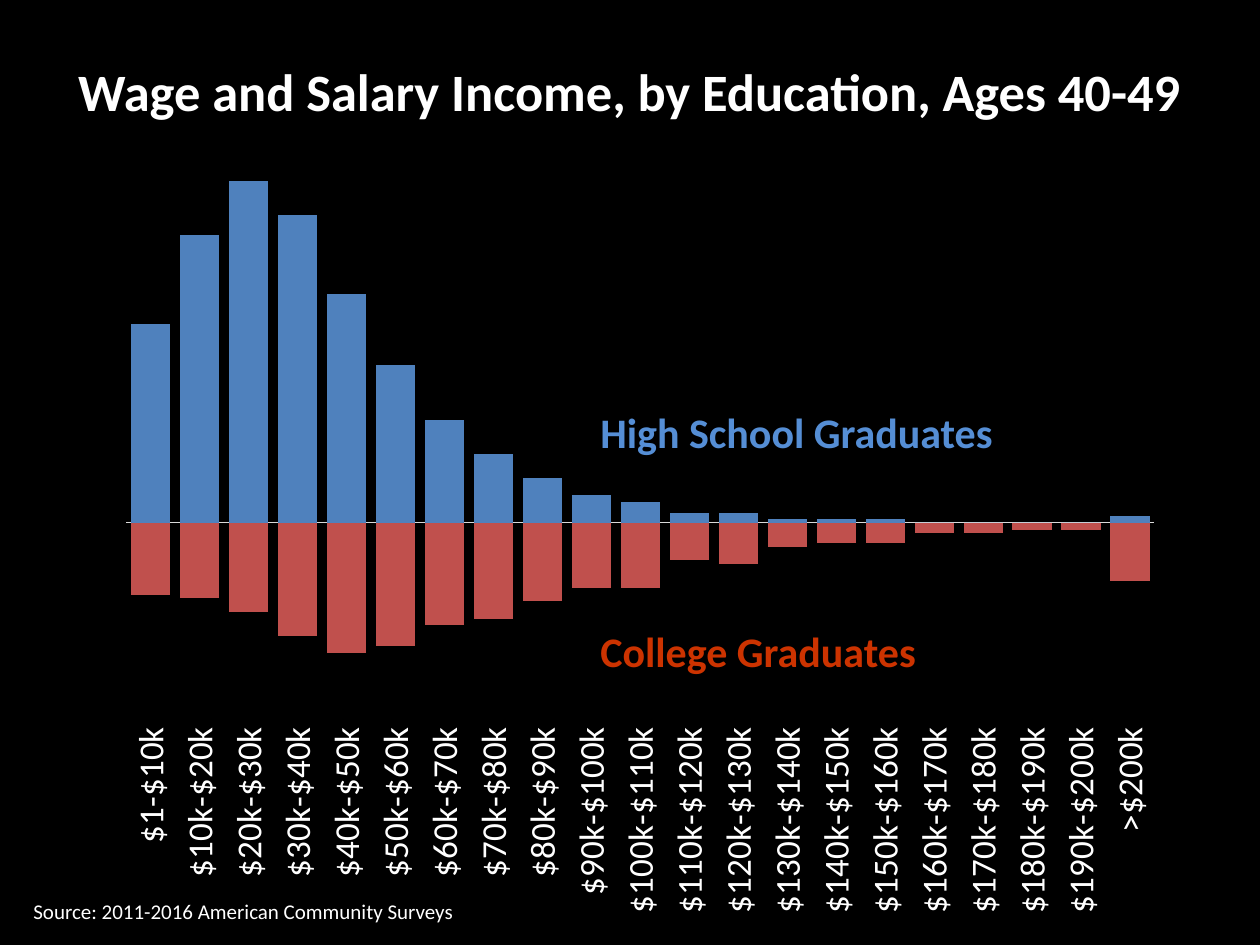
from lxml import etree
from pptx import Presentation
from pptx.chart.data import CategoryChartData
from pptx.dml.color import RGBColor
from pptx.enum import chart as ch, text
from pptx.oxml.ns import qn
from pptx.util import Pt

WHITE = "FFFFFF"
BRACKETS = (["$1-$10k"]
            + [f"${low}k-${low + 10}k" for low in range(10, 200, 10)]
            + [">$200k"])
HIGH_SCHOOL = [58, 84, 100, 90, 67, 46, 30, 20, 13, 8, 6,
               3, 3, 1, 1, 1, 0, 0, 0, 0, 2]
COLLEGE = [-21, -22, -26, -33, -38, -36, -30, -28, -23, -19, -19,
           -11, -12, -7, -6, -6, -3, -3, -2, -2, -17]


def color(hex_code):
    return RGBColor.from_string(hex_code)


def style(font, size, hex_code, bold=False):
    font.name = "Calibri"
    font.size = Pt(size)
    font.bold = bold
    font.color.rgb = color(hex_code)


def add_label(slide, box, words, size, hex_code, bold=False, align=text.PP_ALIGN.LEFT):
    frame = slide.shapes.add_textbox(*map(Pt, box)).text_frame
    frame.word_wrap = False
    frame.auto_size = text.MSO_AUTO_SIZE.SHAPE_TO_FIT_TEXT
    line = frame.paragraphs[0]
    line.text = words
    line.alignment = align
    style(line.font, size, hex_code, bold)


def fix_plot_area(chart, **fractions):
    """Pin the inner plot area to fractions of the chart box."""
    plot_area = chart._chartSpace.chart.plotArea
    for old in plot_area.findall(qn("c:layout")):
        plot_area.remove(old)
    layout = etree.Element(qn("c:layout"))
    manual = etree.SubElement(layout, qn("c:manualLayout"))
    settings = {"layoutTarget": "inner", "xMode": "edge", "yMode": "edge", **fractions}
    for tag, value in settings.items():
        etree.SubElement(manual, qn(f"c:{tag}")).set("val", str(value))
    plot_area.insert(0, layout)


def add_income_chart(slide, box):
    incomes = CategoryChartData()
    incomes.categories = BRACKETS
    incomes.add_series("High School Graduates", HIGH_SCHOOL)
    incomes.add_series("College Graduates", COLLEGE)
    chart = slide.shapes.add_chart(
        ch.XL_CHART_TYPE.COLUMN_CLUSTERED, *map(Pt, box), incomes).chart
    chart.has_legend = False
    chart.has_title = False
    style(chart.font, 20, WHITE)

    # Bars mirrored around zero
    bars = chart.plots[0]
    bars.gap_width = 25
    bars.overlap = 100
    bars.vary_by_categories = False
    for group, hex_code in zip(bars.series, ("4F81BD", "C0504D")):
        group.invert_if_negative = False
        group.format.fill.solid()
        group.format.fill.fore_color.rgb = color(hex_code)

    # Income brackets, read upwards below the bars
    brackets = chart.category_axis
    brackets.tick_label_position = ch.XL_TICK_LABEL_POSITION.LOW
    brackets.major_tick_mark = ch.XL_TICK_MARK.NONE
    brackets.format.line.color.rgb = color("D9D9D9")
    brackets.format.line.width = Pt(0.75)
    style(brackets.tick_labels.font, 20, WHITE)
    direction = brackets._element.find(qn("c:txPr")).find(qn("a:bodyPr"))
    direction.set("rot", "-5400000")
    direction.set("vert", "horz")

    # Hidden share axis
    shares = chart.value_axis
    shares.has_major_gridlines = False
    shares.minimum_scale, shares.maximum_scale = -56, 112
    shares.visible = False
    fix_plot_area(chart, x=0.02, y=0.004, w=0.96, h=0.73)


def build_income_slide(slide, width, height):
    slide.background.fill.solid()
    slide.background.fill.fore_color.rgb = color("000000")
    add_income_chart(slide, (60, 78, width - 108, height - 90))
    # Title and source
    add_label(slide, (34.5, 30, width - 69, 44),
              "Wage and Salary Income, by Education, Ages 40-49",
              30, WHITE, True, text.PP_ALIGN.CENTER)
    add_label(slide, (12, height - 30, 257, 22),
              "Source: 2011-2016 American Community Surveys", 12, WHITE)
    # Names of the two groups
    add_label(slide, (336, 354, 197, 36), "College Graduates", 24, "CC3300", True)
    add_label(slide, (336, 229, 241, 36), "High School Graduates", 24, "558ED5", True)


def main():
    deck = Presentation()
    width, height = 720, 540
    deck.slide_width, deck.slide_height = Pt(width), Pt(height)
    build_income_slide(deck.slides.add_slide(deck.slide_layouts[6]), width, height)
    deck.save("out.pptx")


if __name__ == "__main__":
    main()
